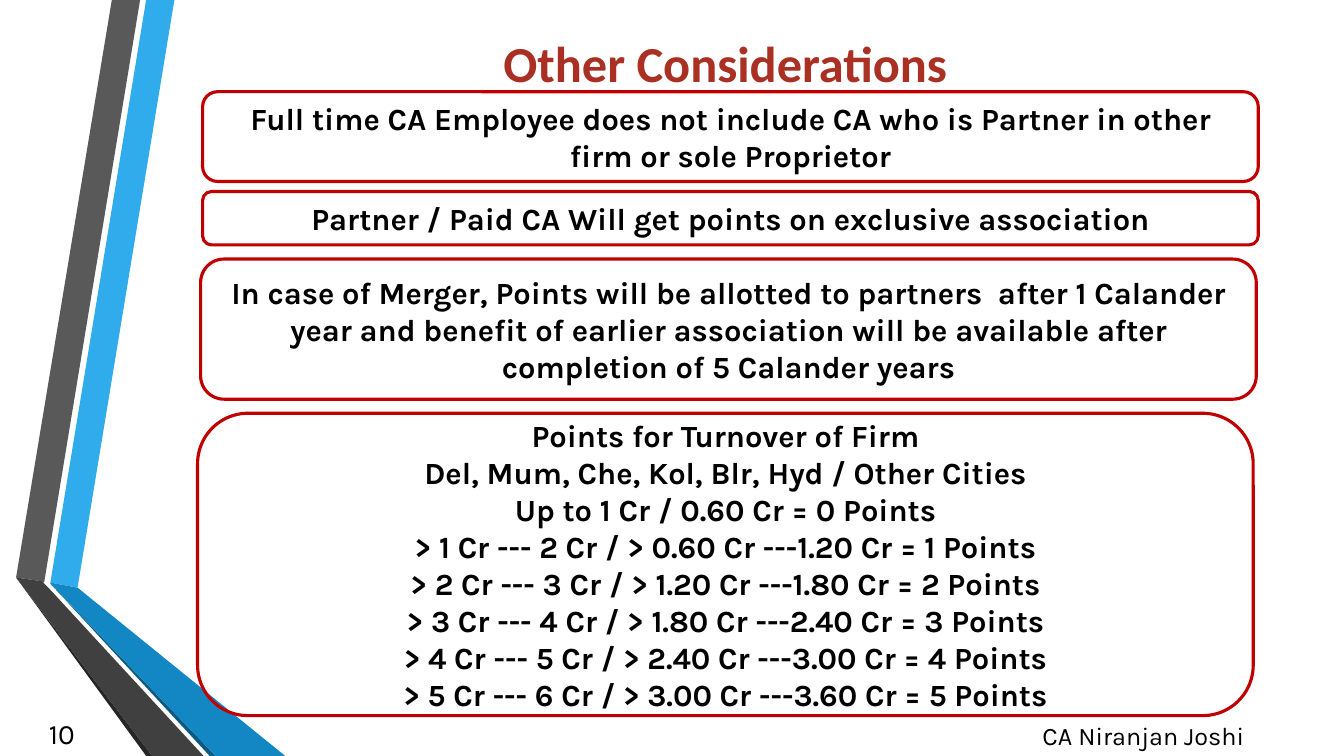
from pptx import Presentation
from pptx import util as u
from pptx.dml.color import RGBColor
from pptx.enum import shapes, text

PX = 9144
RED = "C00000"
CENTER = text.PP_ALIGN.CENTER
MIDDLE = text.MSO_ANCHOR.MIDDLE

RIBBONS = [
    ("30ACEC", [(50, 578), (77, 583), (173, 0), (145, 0)]),
    ("595959", [(139, 0), (111, 0), (16, 573), (44, 577)]),
    ("262626", [(16, 573), (145, 750), (151, 750)]),
    ("0C5A82", [(50, 579), (208, 750), (214, 750)]),
    ("1287C3", [(50, 579), (214, 750), (283, 750), (77, 583), (50, 578)]),
    ("404040", [(202, 750), (48, 583), (43, 578), (44, 577), (16, 573), (151, 750)]),
]

TURNOVER = [
    "Points for Turnover of Firm",
    "Del, Mum, Che, Kol, Blr, Hyd / Other Cities",
    "Up to 1 Cr / 0.60 Cr = 0 Points",
] + [
    f"> {step} Cr --- {step + 1} Cr / > {0.6 * step:.2f} Cr ---{0.6 * (step + 1):.2f} Cr = {step} Points"
    for step in range(1, 6)
]

CARDS = [
    ((201, 91, 1047, 89),
     ["Full time CA Employee does not include CA who is Partner in other firm or sole Proprietor"]),
    ((201, 190, 1047, 53),
     ["Partner / Paid CA Will get points on exclusive association"]),
    ((199, 257, 1047, 139),
     ["In case of Merger, Points will be allotted to partners  after 1 Calander year and benefit of "
      "earlier association will be available after completion of 5 Calander years"]),
    ((196, 410, 1047, 300), TURNOVER),
]


def color(value):
    return RGBColor.from_string(value)


def emu(box):
    return [u.Emu(length * PX) for length in box]


def write(shape, lines, size, font="Karla", ink="000000", bold=False,
          align=CENTER, anchor=MIDDLE):
    frame = shape.text_frame
    frame.word_wrap = True
    frame.auto_size = text.MSO_AUTO_SIZE.NONE
    frame.vertical_anchor = anchor
    for index, line in enumerate(lines):
        para = frame.add_paragraph() if index else frame.paragraphs[0]
        para.alignment = align
        span = para.add_run()
        span.text = line
        span.font.size = u.Pt(size)
        span.font.name = font
        span.font.bold = bold
        span.font.color.rgb = color(ink)


def add_ribbons(page):
    for fill, points in RIBBONS:
        builder = page.shapes.build_freeform(*points[0], scale=PX)
        builder.add_line_segments(points[1:], close=True)
        ribbon = builder.convert_to_shape()
        ribbon.shadow.inherit = False
        ribbon.fill.solid()
        ribbon.fill.fore_color.rgb = color(fill)
        ribbon.line.fill.background()


def add_title(page, box, title):
    holder = page.shapes.title
    holder.left, holder.top, holder.width, holder.height = emu(box)
    write(holder, [title], 36, font="Calibri", ink="A93023", bold=True)


def add_label(page, box, label, size, **style):
    write(page.shapes.add_textbox(*emu(box)), [label], size, **style)


def add_card(page, box, lines):
    card = page.shapes.add_shape(shapes.MSO_SHAPE.ROUNDED_RECTANGLE, *emu(box))
    card.shadow.inherit = False
    card.fill.background()
    card.line.color.rgb = color(RED)
    card.line.width = u.Pt(2.25)
    write(card, lines, 22, bold=True)


def main():
    deck = Presentation()
    deck.slide_width, deck.slide_height = emu((1333, 750))
    page = deck.slides.add_slide(deck.slide_layouts[5])
    add_ribbons(page)
    add_title(page, (232, 25, 975, 74), "Other Considerations")
    add_label(page, (24, 707, 60, 40), "10", 20, align=text.PP_ALIGN.RIGHT)
    add_label(page, (959, 710, 350, 40), "CA Niranjan Joshi", 18, anchor=text.MSO_ANCHOR.TOP)
    for box, lines in CARDS:
        add_card(page, box, lines)
    deck.save("out.pptx")


if __name__ == "__main__":
    main()
